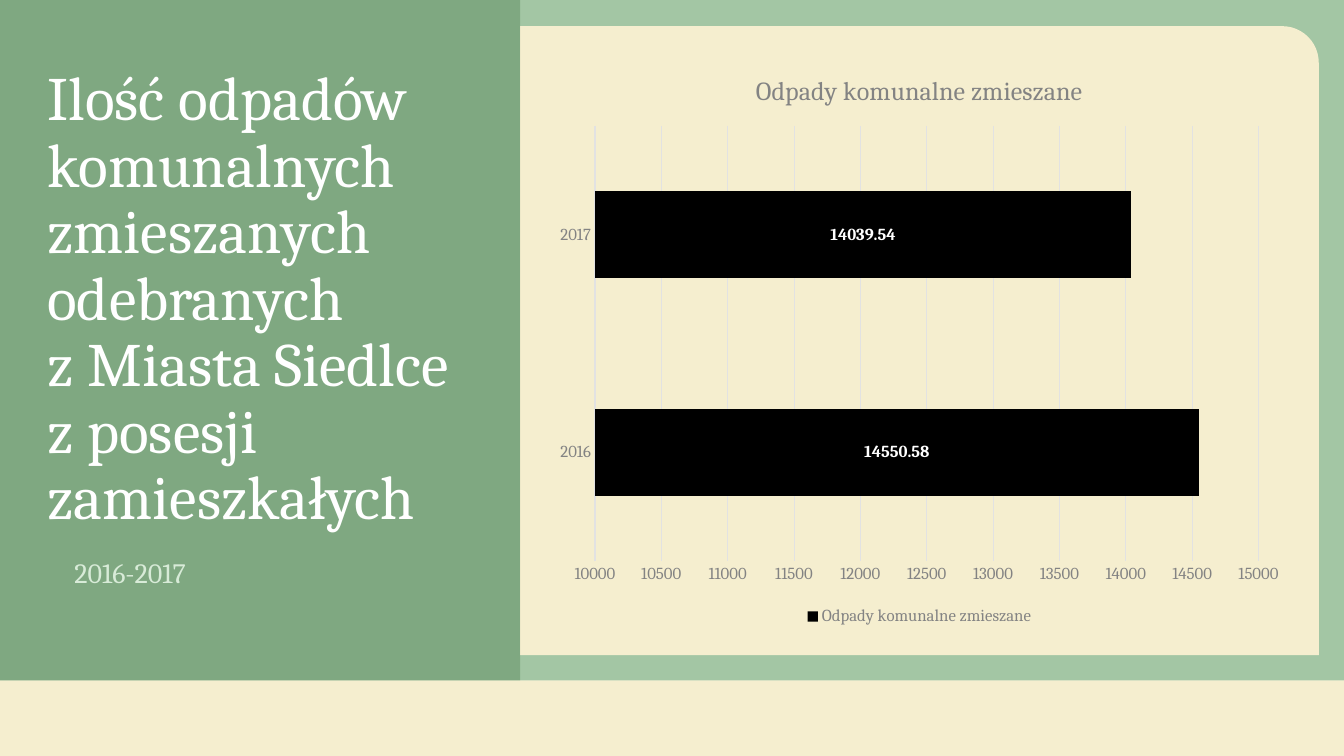
from lxml.etree import SubElement
from pptx import Presentation
from pptx.chart.data import CategoryChartData
from pptx.dml.color import RGBColor
from pptx.enum.chart import XL_CHART_TYPE, XL_LABEL_POSITION, XL_LEGEND_POSITION, XL_TICK_MARK
from pptx.enum.shapes import MSO_SHAPE
from pptx.enum.text import MSO_ANCHOR, MSO_AUTO_SIZE, PP_ALIGN
from pptx.oxml.ns import qn
from pptx.util import Inches, Pt

CREAM = RGBColor(0xF5, 0xEE, 0xCF)
GREEN = RGBColor(0x48, 0x8E, 0x4A)
DARK_GREEN = RGBColor(0x36, 0x6A, 0x38)
PALE_GREEN = RGBColor(0xD8, 0xEB, 0xD8)
WHITE = RGBColor(0xFF, 0xFF, 0xFF)
BLACK = RGBColor(0x00, 0x00, 0x00)
GREY = RGBColor(0x83, 0x83, 0x83)
LIGHT_GREY = RGBColor(0xE2, 0xE2, 0xE2)

TITLE = "Ilość odpadów komunalnych zmieszanych odebranych \vz Miasta Siedlce \vz posesji zamieszkałych"
SERIES = "Odpady komunalne zmieszane"
WASTE = {"2016": 14550.58, "2017": 14039.54}


def apply(target, values):
    for name, value in values.items():
        setattr(target, name, value)


class WasteSlide:
    font_name = "Cambria"

    def __init__(self, deck):
        self.page = deck.slides.add_slide(deck.slide_layouts[5])

    def style_font(self, font, size, color, bold=False):
        apply(font, {"name": self.font_name, "size": Pt(size), "bold": bold})
        font.color.rgb = color

    def style_line(self, line, color):
        line.color.rgb = color
        line.width = Pt(0.75)

    def panel(self, box, color, opacity=100, kind=MSO_SHAPE.RECTANGLE, corner=None):
        shape = self.page.shapes.add_shape(kind, *map(Inches, box))
        shape.shadow.inherit = False
        shape.fill.solid()
        shape.fill.fore_color.rgb = color
        shape.line.fill.background()
        if corner is not None:
            shape.adjustments[0] = corner
        if opacity < 100:
            tint = shape.element.spPr.find(".//" + qn("a:srgbClr"))
            SubElement(tint, qn("a:alpha"), val=str(opacity * 1000))

    def set_text(self, shape, box, text, size, color, anchor):
        left, top, width, height = map(Inches, box)
        apply(shape, {"left": left, "top": top, "width": width, "height": height})
        frame = shape.text_frame
        apply(frame, {"word_wrap": True, "auto_size": MSO_AUTO_SIZE.NONE, "vertical_anchor": anchor})
        frame.text = text
        para = frame.paragraphs[0]
        apply(para, {"alignment": PP_ALIGN.LEFT, "line_spacing": 0.9})
        for span in para.runs:
            self.style_font(span.font, size, color)

    def title(self, box, text, size, color):
        shape = self.page.shapes.title
        self.page.shapes.element.append(shape.element)
        self.set_text(shape, box, text, size, color, MSO_ANCHOR.BOTTOM)

    def caption(self, box, text, size, color):
        shape = self.page.shapes.add_textbox(*map(Inches, box))
        self.set_text(shape, box, text, size, color, MSO_ANCHOR.TOP)

    def bar_chart(self, box, name, values):
        data = CategoryChartData()
        data.categories = list(values)
        data.add_series(name, list(values.values()))
        chart = self.page.shapes.add_chart(XL_CHART_TYPE.BAR_STACKED, *map(Inches, box), data).chart
        self.style_font(chart.font, 12, GREY)
        chart.has_title = True
        chart.chart_title.include_in_layout = False
        chart.chart_title.text_frame.text = name
        self.style_font(chart.chart_title.text_frame.paragraphs[0].runs[0].font, 18.6, GREY)
        chart.has_legend = True
        apply(chart.legend, {"position": XL_LEGEND_POSITION.BOTTOM, "include_in_layout": False})
        self.style_font(chart.legend.font, 12, GREY)
        self.style_axes(chart)
        self.style_bars(chart.plots[0])

    def style_axes(self, chart):
        years, amounts = chart.category_axis, chart.value_axis
        for axis in (years, amounts):
            apply(axis, {"major_tick_mark": XL_TICK_MARK.NONE, "minor_tick_mark": XL_TICK_MARK.NONE})
            self.style_font(axis.tick_labels.font, 12, GREY)
        self.style_line(years.format.line, LIGHT_GREY)
        apply(amounts, {"minimum_scale": 10000, "maximum_scale": 15000, "major_unit": 500,
                        "has_major_gridlines": True})
        amounts.format.line.fill.background()
        self.style_line(amounts.major_gridlines.format.line, LIGHT_GREY)

    def style_bars(self, plot):
        apply(plot, {"gap_width": 150, "overlap": 100, "vary_by_categories": False})
        bars = plot.series[0]
        bars.format.fill.solid()
        bars.format.fill.fore_color.rgb = BLACK
        labels = bars.data_labels
        apply(labels, {"show_value": True, "position": XL_LABEL_POSITION.CENTER})
        self.style_font(labels.font, 12, WHITE, True)


def main():
    deck = Presentation()
    apply(deck, {"slide_width": Inches(13.33), "slide_height": Inches(7.5)})
    slide = WasteSlide(deck)
    slide.panel((0, 6.75, 13.33, 0.75), CREAM)
    slide.panel((0, 0, 13.33, 6.75), GREEN, 50)
    slide.panel((5.16, 0.26, 7.92, 6.24), CREAM, kind=MSO_SHAPE.ROUND_1_RECTANGLE, corner=0.058)
    slide.panel((0, 0, 5.16, 6.75), DARK_GREEN, 32)
    slide.title((0.37, 0.26, 4.41, 5.08), TITLE, 44, WHITE)
    slide.caption((0.64, 5.5, 4.14, 1), "2016-2017", 20, PALE_GREEN)
    slide.bar_chart((5.41, 0.51, 7.42, 5.74), SERIES, WASTE)
    deck.save("out.pptx")


if __name__ == "__main__":
    main()
